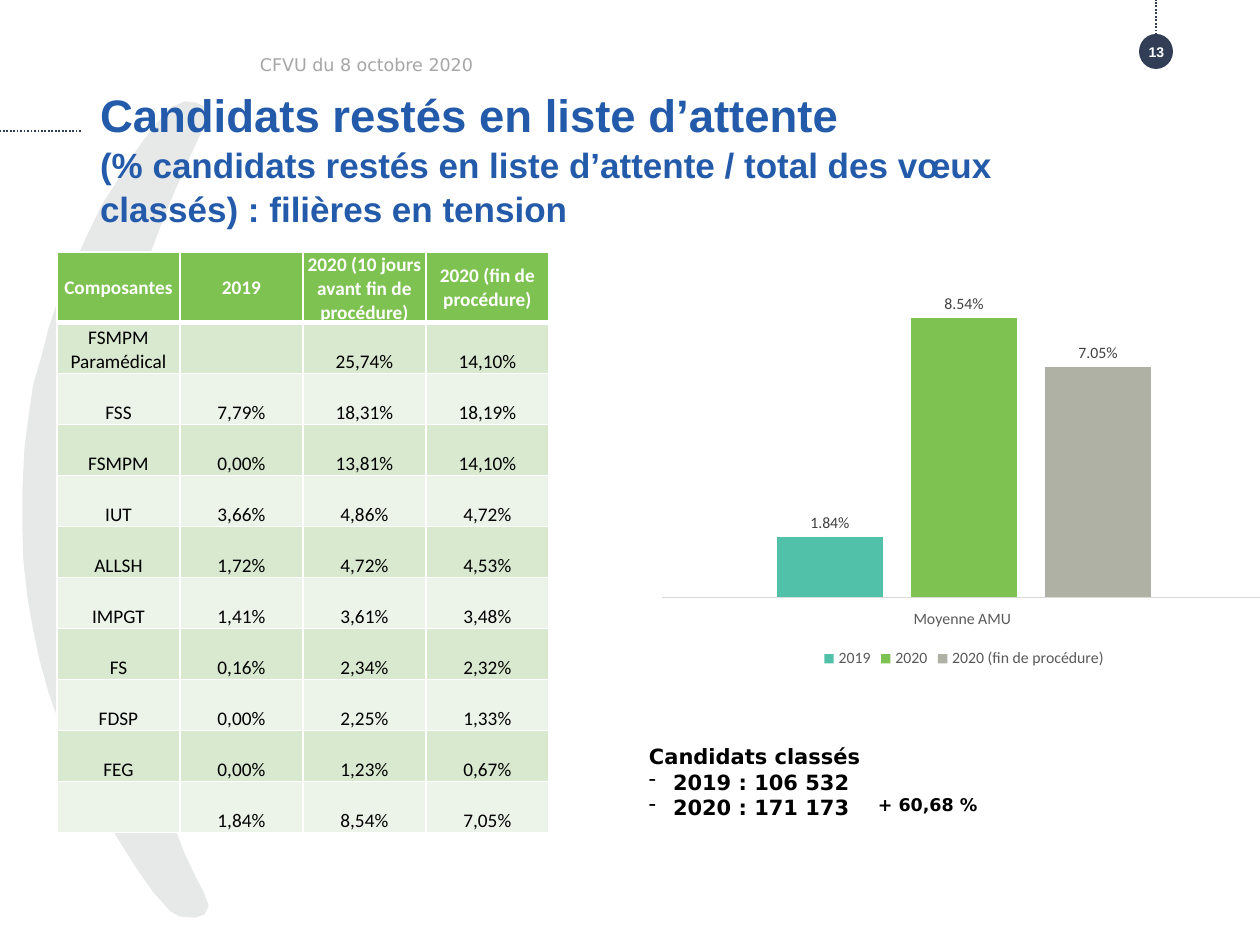
from dataclasses import dataclass

from lxml import etree
from pptx import Presentation
from pptx.chart.data import CategoryChartData
from pptx.dml.color import RGBColor
from pptx.enum.chart import XL_CHART_TYPE, XL_LABEL_POSITION, XL_LEGEND_POSITION, XL_TICK_LABEL_POSITION, XL_TICK_MARK
from pptx.enum.dml import MSO_LINE
from pptx.enum.shapes import MSO_CONNECTOR, MSO_SHAPE
from pptx.enum.text import MSO_ANCHOR, PP_ALIGN
from pptx.oxml.ns import qn
from pptx.util import Pt

EMU_PER_PX = 914400 / 126
TOP, MIDDLE, BOTTOM = MSO_ANCHOR.TOP, MSO_ANCHOR.MIDDLE, MSO_ANCHOR.BOTTOM
LEFT, CENTER = PP_ALIGN.LEFT, PP_ALIGN.CENTER
COLUMNS = XL_CHART_TYPE.COLUMN_CLUSTERED
OUTSIDE_END = XL_LABEL_POSITION.OUTSIDE_END
LEGEND_BOTTOM = XL_LEGEND_POSITION.BOTTOM
NO_TICK = XL_TICK_MARK.NONE
LABELS_LOW = XL_TICK_LABEL_POSITION.LOW
STRAIGHT = MSO_CONNECTOR.STRAIGHT
ELLIPSE = MSO_SHAPE.OVAL
DOTTED = MSO_LINE.ROUND_DOT


@dataclass(frozen=True)
class Theme:
    title_font: str = "Arial"
    data_font: str = "Calibri"
    note_font: str = "DejaVu Sans"
    blue: str = "235BAA"
    navy: str = "313E56"
    black: str = "000000"
    white: str = "FFFFFF"
    crescent: str = "E7E8E8"
    muted: str = "A6A6A6"
    header: str = "7EC251"
    bands: tuple = ("D8E9D0", "ECF4E9")
    series: tuple = ("51C2A9", "7EC251", "AFB1A5")
    axis_line: str = "D9D9D9"
    axis_text: str = "595959"
    label_text: str = "404040"
    title_size: int = 26
    subtitle_size: int = 20
    note_size: int = 12
    table_size: int = 11
    small_size: int = 10
    chart_size: int = 9
    number_size: int = 8


THEME = Theme()

CRESCENT = [
    (208, 113), (207, 108), (195, 103), (185, 102), (171, 108), (163, 117), (154, 127), (141, 145),
    (131, 159), (120, 178), (103, 204), (87, 237), (72, 270), (58, 302), (49, 329), (42, 357),
    (34, 384), (29, 418), (25, 449), (23, 491), (23, 529), (24, 561), (28, 597), (34, 631),
    (40, 659), (49, 692), (60, 723), (74, 755), (87, 781), (105, 816), (125, 849), (139, 871),
    (154, 892), (171, 911), (180, 916), (195, 917), (204, 914), (208, 906), (203, 892), (195, 877),
    (185, 856), (173, 825), (159, 789), (144, 747), (132, 707), (121, 662), (113, 620), (107, 563),
    (105, 525), (105, 495), (107, 457), (110, 421), (117, 378), (123, 344), (135, 300), (146, 263),
    (160, 226), (175, 189), (192, 151), (202, 129),
]

RATES = [
    ("Composantes", "2019", "2020 (10 jours avant fin de procédure)", "2020 (fin de procédure)"),
    ("FSMPM Paramédical", "", "25,74%", "14,10%"),
    ("FSS", "7,79%", "18,31%", "18,19%"),
    ("FSMPM", "0,00%", "13,81%", "14,10%"),
    ("IUT", "3,66%", "4,86%", "4,72%"),
    ("ALLSH", "1,72%", "4,72%", "4,53%"),
    ("IMPGT", "1,41%", "3,61%", "3,48%"),
    ("FS", "0,16%", "2,34%", "2,32%"),
    ("FDSP", "0,00%", "2,25%", "1,33%"),
    ("FEG", "0,00%", "1,23%", "0,67%"),
    ("", "1,84%", "8,54%", "7,05%"),
]
AVERAGES = [("2019", 0.0184), ("2020", 0.0854), ("2020 (fin de procédure)", 0.0705)]


def px(length):
    return round(length * EMU_PER_PX)


def rgb(value):
    return RGBColor.from_string(value)


def style_font(font, name, size, color, bold=False):
    font.name, font.size, font.bold = name, Pt(size), bold
    font.color.rgb = rgb(color)


def add_span(para, text, *style):
    span = para.add_run()
    span.text = text
    style_font(span.font, *style)


def add_box(page, left, top, width, height, anchor=TOP, inset=(0, 0)):
    """Return the text frame of a new wrapping box; inset is (horizontal, vertical)."""
    frame = page.shapes.add_textbox(px(left), px(top), px(width), px(height)).text_frame
    frame.word_wrap = True
    frame.vertical_anchor = anchor
    frame.margin_left = frame.margin_right = px(inset[0])
    frame.margin_top = frame.margin_bottom = px(inset[1])
    return frame


def add_label(page, bounds, text, *style, align=LEFT, inset=(0, 0)):
    para = add_box(page, *bounds, MIDDLE, inset).paragraphs[0]
    para.alignment = align
    add_span(para, text, *style)


def add_crescent(page):
    builder = page.shapes.build_freeform(*CRESCENT[0], scale=EMU_PER_PX)
    builder.add_line_segments(CRESCENT[1:], close=True)
    shape = builder.convert_to_shape()
    shape.shadow.inherit = False
    shape.fill.solid()
    shape.fill.fore_color.rgb = shape.line.color.rgb = rgb(THEME.crescent)
    shape.line.width = Pt(0.75)


def add_dotted_line(page, *ends):
    line = page.shapes.add_connector(STRAIGHT, *map(px, ends))
    line.line.color.rgb = rgb(THEME.navy)
    line.line.width = Pt(1)
    line.line.dash_style = DOTTED
    etree.SubElement(line._element.spPr, qn("a:effectLst"))


def add_page_number(page):
    disc = page.shapes.add_shape(ELLIPSE, px(1139), px(34), px(34), px(35))
    disc.shadow.inherit = False
    disc.fill.solid()
    disc.fill.fore_color.rgb = rgb(THEME.navy)
    disc.line.fill.background()
    add_dotted_line(page, 1156, 35, 1156, 0)
    add_label(page, (1125, 42, 63, 19), "13", THEME.title_font, THEME.number_size, THEME.white, True, align=CENTER)


def add_title(page):
    para = add_box(page, 100, 84, 1012, 140).paragraphs[0]
    para.line_spacing = 1.05
    add_span(para, "Candidats restés en liste d’attente ", THEME.title_font, THEME.title_size, THEME.blue, True)
    para.add_line_break()
    add_span(para, "(% candidats restés en liste d’attente / total des vœux classés) : filières en tension",
             THEME.title_font, THEME.subtitle_size, THEME.blue, True)


def set_border(cell, side, points):
    line = etree.SubElement(cell._tc.get_or_add_tcPr(), qn("a:" + side), w=str(Pt(points)))
    fill = etree.SubElement(line, qn("a:solidFill"))
    etree.SubElement(fill, qn("a:srgbClr"), val=THEME.white)


def fill_cell(cell, text, row):
    header = row == 0
    cell.margin_left = cell.margin_right = cell.margin_top = px(1)
    cell.margin_bottom = 0
    cell.vertical_anchor = MIDDLE if header else BOTTOM
    widths = {"lnL": 1, "lnR": 1, "lnT": 3 if row == 1 else 1, "lnB": 3 if header else 1}
    for side, points in widths.items():
        set_border(cell, side, points)
    cell.fill.solid()
    cell.fill.fore_color.rgb = rgb(THEME.header if header else THEME.bands[(row - 1) % 2])
    para = cell.text_frame.paragraphs[0]
    para.alignment = CENTER
    style = THEME.data_font, THEME.table_size, THEME.white if header else THEME.black, header
    if text:
        add_span(para, text, *style)
    else:
        style_font(para.font, *style)


def add_rates_table(page):
    table = page.shapes.add_table(len(RATES), len(RATES[0]), px(57), px(252), px(492), px(580)).table
    for column in table.columns:
        column.width = px(123)
    for index, values in enumerate(RATES):
        table.rows[index].height = px(51 if index else 70)
        for column, text in enumerate(values):
            fill_cell(table.cell(index, column), text, index)


def add_averages_chart(page):
    data = CategoryChartData(number_format="0.00%")
    data.categories = ["Moyenne AMU "]
    for name, value in AVERAGES:
        data.add_series(name, [value])
    chart = page.shapes.add_chart(COLUMNS, px(649), px(295), px(630), px(378), data).chart
    style_font(chart.font, THEME.data_font, THEME.small_size, THEME.black)
    chart.has_title = False
    chart.has_legend = True
    chart.legend.position = LEGEND_BOTTOM
    chart.legend.include_in_layout = False
    style_font(chart.legend.font, THEME.data_font, THEME.chart_size, THEME.axis_text)

    values, categories = chart.value_axis, chart.category_axis
    values.visible = values.has_major_gridlines = False
    values.minimum_scale, values.maximum_scale = 0, 0.09
    categories.major_tick_mark = categories.minor_tick_mark = NO_TICK
    categories.tick_label_position = LABELS_LOW
    categories.format.line.color.rgb = rgb(THEME.axis_line)
    categories.format.line.width = Pt(0.75)
    style_font(categories.tick_labels.font, THEME.data_font, THEME.chart_size, THEME.axis_text)

    plot = chart.plots[0]
    plot.gap_width, plot.overlap, plot.vary_by_categories = 219, -27, False
    for series, color in zip(plot.series, THEME.series):
        series.format.fill.solid()
        series.format.fill.fore_color.rgb = rgb(color)
        labels = series.data_labels
        labels.show_value = True
        labels.position = OUTSIDE_END
        labels.number_format, labels.number_format_is_linked = "0.00%", False
        style_font(labels.font, THEME.data_font, THEME.chart_size, THEME.label_text)


def add_ranked_note(page):
    style = THEME.note_font, THEME.note_size, THEME.black, True
    frame = add_box(page, 649, 744, 311, 75)
    add_span(frame.paragraphs[0], "Candidats classés", *style)
    for text in ("2019 : 106 532", "2020 : 171 173"):
        para = frame.add_paragraph()
        properties = para._p.get_or_add_pPr()
        properties.set("marL", str(px(24)))
        properties.set("indent", str(-px(24)))
        etree.SubElement(properties, qn("a:buChar"), char="-")
        add_span(para, text, *style)


def main():
    deck = Presentation()
    deck.slide_width, deck.slide_height = px(1260), px(945)
    page = deck.slides.add_slide(deck.slide_layouts[6])
    add_crescent(page)
    add_page_number(page)
    add_dotted_line(page, 81, 131, 0, 131)
    add_title(page)
    add_label(page, (247, 37, 834, 55), "CFVU du 8 octobre 2020", THEME.note_font, THEME.small_size, THEME.muted, inset=(13, 6))
    add_ranked_note(page)
    add_rates_table(page)
    add_averages_chart(page)
    add_label(page, (878, 794, 165, 21), "+ 60,68 %", THEME.note_font, THEME.small_size, THEME.black, True)
    deck.save("out.pptx")


if __name__ == "__main__":
    main()
